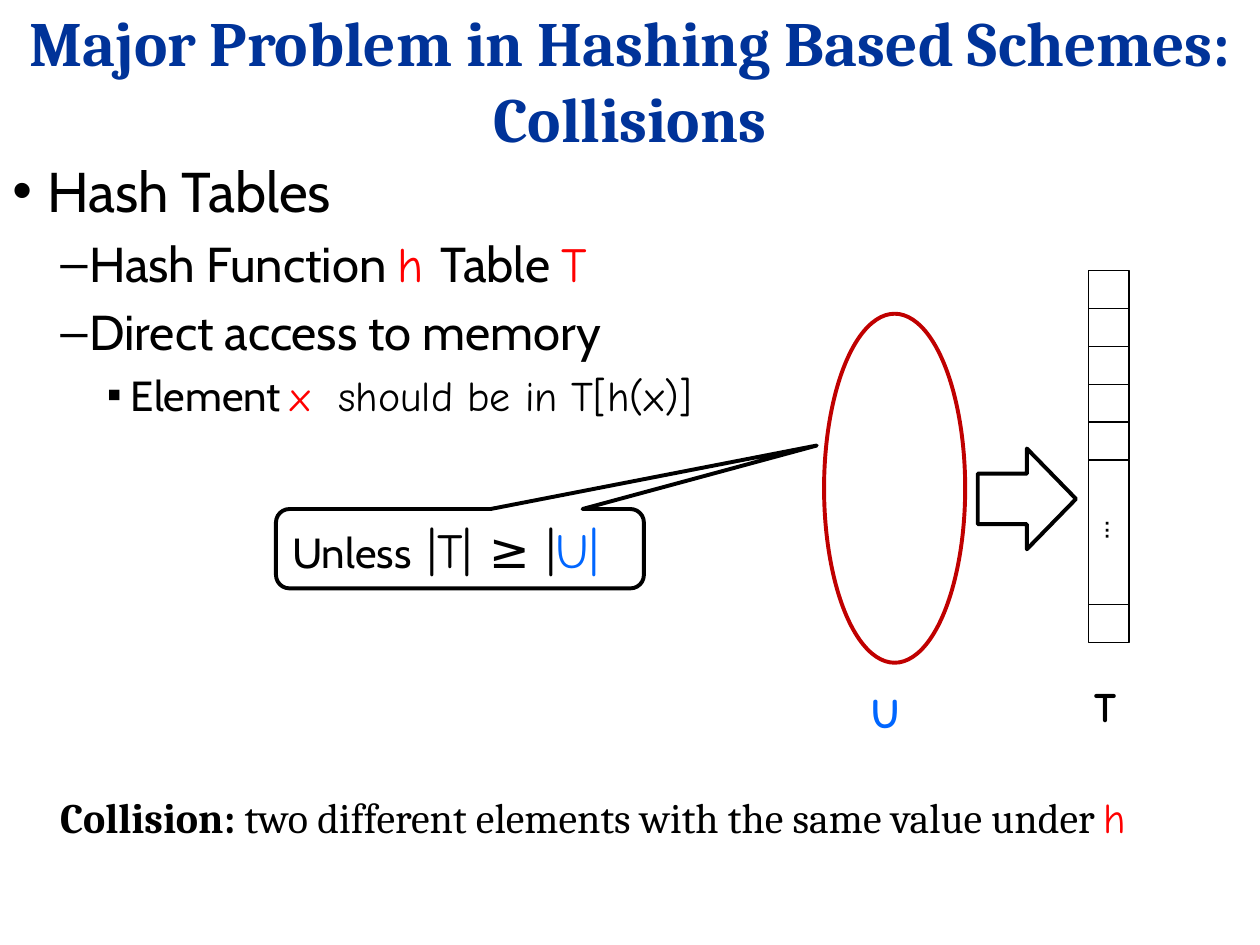
import pptx
import pptx.util
import pptx.dml.color
import pptx.enum.shapes
import pptx.enum.text
import lxml.etree

Inches, Pt = pptx.util.Inches, pptx.util.Pt
SHAPE = pptx.enum.shapes.MSO_SHAPE
ALIGN = pptx.enum.text.PP_ALIGN
ANCHOR = pptx.enum.text.MSO_ANCHOR
COLORS = {"title": "003399", "text": "000000", "key": "FF0000",
          "universe": "0066FF", "ellipse": "C00000"}
CABIN, CAMBRIA, COMIC = "Cabin", "Cambria", "Comic Neue"


def rgb(name):
    """Return the named colour."""
    return pptx.dml.color.RGBColor.from_string(COLORS[name])


def add_runs(p, runs):
    """Add runs given as (text, font, size, colour, bold)."""
    for text, font, size, color, bold in runs:
        r = p.add_run()
        r.text = text
        fmt = {"name": font, "size": Pt(size), "bold": bold}
        for key, value in fmt.items():
            setattr(r.font, key, value)
        r.font.color.rgb = rgb(color)


def set_bullet(p, char, margin, hang):
    """Give a paragraph a bullet with a hanging indent."""
    pPr = p._p.get_or_add_pPr()
    pPr.set("marL", str(Inches(margin)))
    pPr.set("indent", str(-Inches(hang)))
    ns = pptx.oxml.ns.qn
    lxml.etree.SubElement(pPr, ns("a:buFont")).set("typeface", "Arial")
    lxml.etree.SubElement(pPr, ns("a:buChar")).set("char", char)


def add_text(s, box, runs, align=ALIGN.LEFT, anchor=ANCHOR.TOP):
    """Add a one-paragraph text box."""
    sp = s.shapes.add_textbox(*map(Inches, box))
    tf = sp.text_frame
    for key, value in {"word_wrap": True, "vertical_anchor": anchor}.items():
        setattr(tf, key, value)
    p = tf.paragraphs[0]
    p.alignment = align
    add_runs(p, runs)
    return sp


def add_outline(s, kind, box, color="text", width=2.25, adj=()):
    """Add an unfilled preset shape."""
    sp = s.shapes.add_shape(kind, *map(Inches, box))
    sp.shadow.inherit = False
    sp.fill.background()
    sp.line.color.rgb = rgb(color)
    sp.line.width = Pt(width)
    for i, value in enumerate(adj):
        sp.adjustments[i] = value
    return sp


def add_bullets(s, box):
    """Add the bulleted hash table outline."""
    levels = [("•", 0.28, 0.28), ("–", 0.61, 0.23), ("▪", 0.94, 0.19)]
    items = [
        (0, [("Hash Tables", CABIN, 32, "text", False)]),
        (1, [("Hash Function ", CABIN, 28, "text", False),
             ("h ", COMIC, 28, "key", False),
             ("Table ", CABIN, 28, "text", False),
             ("T", COMIC, 28, "key", False)]),
        (1, [("Direct access to memory", CABIN, 28, "text", False)]),
        (2, [("Element ", CABIN, 24, "text", False),
             ("x  ", COMIC, 24, "key", False),
             ("should be in T[h(x)]", COMIC, 24, "text", False)]),
    ]
    tf = s.shapes.add_textbox(*map(Inches, box)).text_frame
    tf.word_wrap = True
    for i, (level, runs) in enumerate(items):
        p = tf.add_paragraph() if i else tf.paragraphs[0]
        p.level = level
        p.space_before = Pt(0.2 * runs[0][2]) if i else Pt(0)
        set_bullet(p, *levels[level])
        add_runs(p, runs)


def add_universe(s, box):
    """Add the universe ellipse with its label below."""
    x, y, w, h = box
    add_outline(s, SHAPE.OVAL, box, "ellipse")
    add_text(s, (x + w / 2 - 0.32, y + h + 0.14, 0.49, 0.51),
             [("U", COMIC, 24, "universe", True)], ALIGN.CENTER)


def add_hash_table(s, box):
    """Add the column of table cells with its label below."""
    x, y, w, h = box
    cell = 0.3
    gap_top, last = y + 5 * cell, y + h - cell
    rows = [(y + i * cell, cell) for i in range(5)]
    rows += [(gap_top, last - gap_top), (last, cell)]
    for top, height in rows:
        add_outline(s, SHAPE.RECTANGLE, (x, top, w, height), width=0.75)
    dots = add_text(s, (x + 0.02, y + 1.86, 0.43, 0.4),
                    [("...", CABIN, 18, "text", False)], ALIGN.CENTER)
    dots.rotation = 90
    dots.text_frame.paragraphs[0].space_before = Pt(9)
    add_text(s, (x - 0.11, y + h + 0.25, 0.49, 0.51),
             [("T", COMIC, 24, "text", True)], ALIGN.CENTER)


def add_callout(s, box):
    """Add the callout pointing at the universe."""
    sp = add_outline(s, SHAPE.ROUNDED_RECTANGULAR_CALLOUT, box,
                     adj=(0.97, -1.3, 0.17))
    tf = sp.text_frame
    for key, value in {"word_wrap": True,
                       "vertical_anchor": ANCHOR.MIDDLE}.items():
        setattr(tf, key, value)
    p = tf.paragraphs[0]
    p.alignment = ALIGN.LEFT
    add_runs(p, [("Unless", CABIN, 24, "text", False),
                 (" |T| ≥ |", COMIC, 28, "text", False),
                 ("U|", COMIC, 28, "universe", False)])


def main():
    """Build the collisions slide."""
    prs = pptx.Presentation()
    prs.slide_width, prs.slide_height = Inches(10), Inches(7.5)
    s = prs.slides.add_slide(prs.slide_layouts[6])
    add_text(s, (0, 0.2, 10, 0.86),
             [("Major Problem in Hashing Based Schemes: Collisions",
               CAMBRIA, 36, "title", True)], ALIGN.CENTER, ANCHOR.MIDDLE)
    add_bullets(s, (0, 1.19, 9.89, 2.3))
    add_universe(s, (6.54, 2.49, 1.12, 2.77))
    add_outline(s, SHAPE.RIGHT_ARROW, (7.76, 3.56, 0.78, 0.8))
    add_hash_table(s, (8.64, 2.15, 0.32, 2.95))
    add_callout(s, (2.19, 4.04, 2.92, 0.63))
    add_text(s, (0.38, 6.23, 9.5, 0.5),
             [("Collision: ", CAMBRIA, 24, "text", True),
              ("two different elements with the same value under ",
               CAMBRIA, 24, "text", False),
              ("h", COMIC, 24, "key", False)], anchor=ANCHOR.MIDDLE)
    prs.save("out.pptx")


if __name__ == "__main__":
    main()
